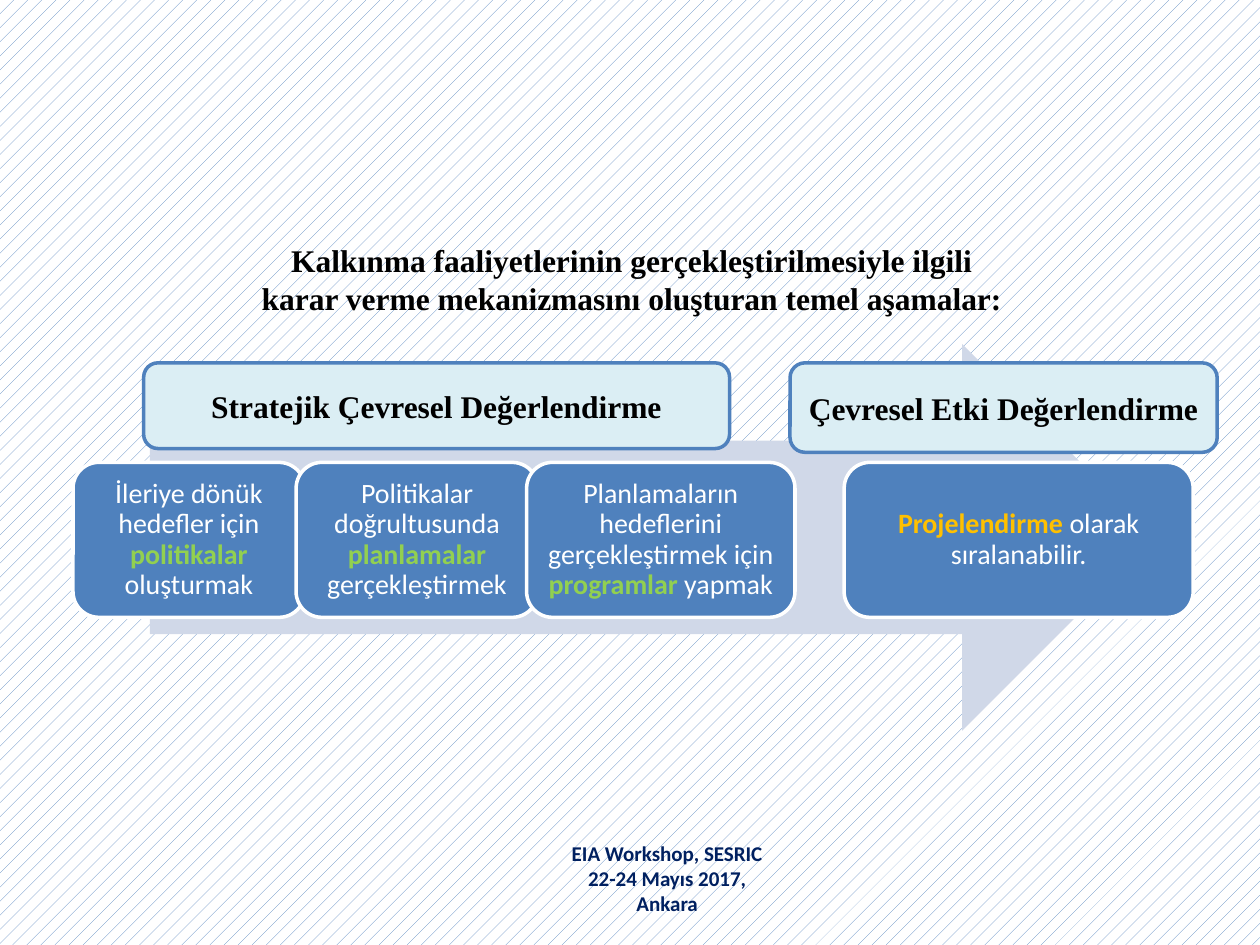
from pptx import Presentation
from pptx.dml.color import RGBColor
from pptx.enum.dml import MSO_PATTERN
from pptx.enum.shapes import MSO_SHAPE
from pptx.enum.text import MSO_ANCHOR, PP_ALIGN
from pptx.util import Inches, Pt

ARROW = MSO_SHAPE.RIGHT_ARROW
ROUNDED = MSO_SHAPE.ROUNDED_RECTANGLE
MIDDLE = MSO_ANCHOR.MIDDLE
CENTER = PP_ALIGN.CENTER
DOTS = MSO_PATTERN.PERCENT_10

BLUE, PALE_BLUE, ARROW_BLUE, NAVY = "4F81BD", "DBEEF4", "D0D8E8", "002060"
WHITE, BLACK, GREEN, AMBER = "FFFFFF", "000000", "92D050", "FFC000"
SANS, SERIF = "Calibri", "Times New Roman"

STEP_TOP, STEP_HEIGHT = 3.67, 1.23
# left, width, text before, key word, text after, key colour
STEPS = [
    (0.58, 1.84, "İleriye dönük hedefler için ", "politikalar", " oluşturmak", GREEN),
    (2.35, 1.92, "Politikalar doğrultusunda ", "planlamalar", " gerçekleştirmek", GREEN),
    (4.18, 2.13, "Planlamaların hedeflerini gerçekleştirmek için ", "programlar",
     " yapmak", GREEN),
    (6.7, 2.77, "", "Projelendirme", " olarak sıralanabilir.", AMBER),
]
HEADERS = [
    (6.27, 3.39, 0.71, "Çevresel Etki Değerlendirme"),
    (1.14, 4.65, 0.68, "Stratejik Çevresel Değerlendirme"),
]


def rgb(value):
    return RGBColor.from_string(value)


class Page:
    def __init__(self, deck):
        self.slide = deck.slides.add_slide(deck.slide_layouts[6])

    def background(self, front, back):
        fill = self.slide.background.fill
        fill.patterned()
        fill.pattern = DOTS
        fill.fore_color.rgb = rgb(front)
        fill.back_color.rgb = rgb(back)

    def shape(self, kind, left, top, width, height, fill, line=None):
        shape = self.slide.shapes.add_shape(
            kind, Inches(left), Inches(top), Inches(width), Inches(height))
        shape.shadow.inherit = False
        shape.fill.solid()
        shape.fill.fore_color.rgb = rgb(fill)
        if line:
            shape.line.color.rgb = rgb(line)
            shape.line.width = Pt(2)
        else:
            shape.line.fill.background()
        return shape

    def set_lines(self, shape, lines, font, size, color):
        """Fill a shape with centred bold lines."""
        frame = shape.text_frame
        frame.word_wrap = True
        frame.vertical_anchor = MIDDLE
        frame.text = "\n".join(lines)
        for para in frame.paragraphs:
            para.alignment = CENTER
            for span in para.runs:
                self.style(span, font, size, color, True)

    def style(self, span, font, size, color, bold):
        span.font.name = font
        span.font.size = Pt(size)
        span.font.color.rgb = rgb(color)
        span.font.bold = bold

    def text(self, left, top, width, height, lines, font, size, color):
        box = self.slide.shapes.add_textbox(
            Inches(left), Inches(top), Inches(width), Inches(height))
        self.set_lines(box, lines, font, size, color)

    def header(self, left, width, height, label):
        box = self.shape(ROUNDED, left, 2.88, width, height, PALE_BLUE, BLUE)
        self.set_lines(box, [label], SERIF, 18, BLACK)

    def step(self, left, width, before, key, after, key_color):
        box = self.shape(ROUNDED, left, STEP_TOP, width, STEP_HEIGHT, BLUE, WHITE)
        frame = box.text_frame
        frame.word_wrap = True
        frame.vertical_anchor = MIDDLE
        frame.margin_left = frame.margin_right = Inches(0.07)
        frame.margin_top = frame.margin_bottom = Inches(0.07)
        para = frame.paragraphs[0]
        para.alignment = CENTER
        para.line_spacing = 0.9
        for words, color in ((before, WHITE), (key, key_color), (after, WHITE)):
            if words:
                span = para.add_run()
                span.text = words
                self.style(span, SANS, 16, color, words == key)


def main():
    deck = Presentation()
    deck.slide_width, deck.slide_height = Inches(10), Inches(7.5)
    page = Page(deck)
    page.background(BLUE, WHITE)
    page.shape(ARROW, 1.19, 2.73, 7.98, 3.07, ARROW_BLUE)
    for step in STEPS:
        page.step(*step)
    page.text(1.67, 1.86, 6.69, 0.71,
              ["Kalkınma faaliyetlerinin gerçekleştirilmesiyle ilgili",
               "karar verme mekanizmasını oluşturan temel aşamalar:"],
              SERIF, 18, BLACK)
    for header in HEADERS:
        page.header(*header)
    page.text(4.34, 6.66, 1.91, 0.62,
              ["EIA Workshop, SESRIC", "22-24 Mayıs 2017, Ankara"],
              SANS, 12, NAVY)
    deck.save("out.pptx")


if __name__ == "__main__":
    main()
